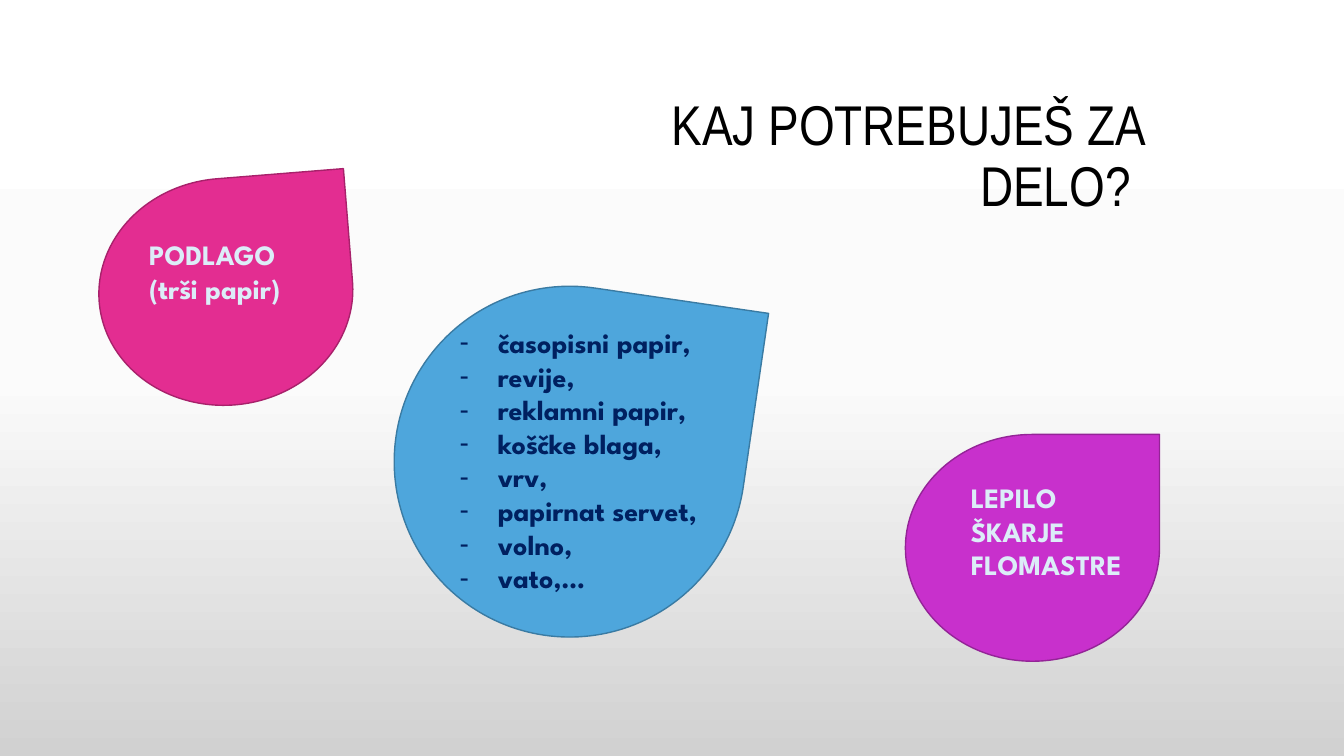
from copy import deepcopy

from lxml.etree import SubElement
from pptx import Presentation
from pptx.dml.color import RGBColor
from pptx.enum.shapes import MSO_SHAPE
from pptx.enum.text import MSO_ANCHOR, MSO_AUTO_SIZE, PP_ALIGN
from pptx.oxml.ns import qn
from pptx.util import Inches, Pt


def rgb(value):
    return RGBColor.from_string(value)


def style(paragraph, font_name, size, color, bold):
    for run in paragraph.runs:
        run.font.name = font_name
        run.font.size = Pt(size)
        run.font.bold = bold
        run.font.color.rgb = rgb(color)


deck = Presentation()
deck.slide_width = Inches(13.33)
deck.slide_height = Inches(7.5)
slide = deck.slides.add_slide(deck.slide_layouts[5])

backdrop = slide.background.fill
backdrop.gradient()
backdrop.gradient_angle = 270
stop_list = backdrop._fill._gradFill.gsLst
stop_list.append(deepcopy(stop_list[-1]))
for stop, position, color in zip(
    backdrop.gradient_stops, (0, 0.5, 1), ("FFFFFF", "FBFBFB", "D1D1D1")
):
    stop.position = position
    stop.color.rgb = rgb(color)

title = slide.shapes.title
title.left, title.top = Inches(5.18), Inches(0.86)
title.width, title.height = Inches(6.26), Inches(1.41)
title.text_frame.text = "KAJ POTREBUJEŠ ZA DELO? "
title.text_frame.word_wrap = True
title.text_frame.auto_size = MSO_AUTO_SIZE.NONE
title.text_frame.vertical_anchor = MSO_ANCHOR.MIDDLE
question = title.text_frame.paragraphs[0]
question.alignment = PP_ALIGN.RIGHT
question.line_spacing = 0.9
style(question, "Arial Narrow", 40, "000000", False)

materials = [
    "časopisni papir,",
    "revije,",
    "reklamni papir,",
    "koščke blaga,",
    "vrv,",
    "papirnat servet,",
    "volno,",
    "vato,…",
]
tools = ["LEPILO", "ŠKARJE", "FLOMASTRE"]

drops = [
    ((0.98, 1.77, 2.52, 2.25), 355.4, "E32D91", "A8216B",
     (1.38, 2.31, 1.91, 0.77), ["PODLAGO (trši papir)"], "DCEDF8", False),
    ((3.91, 2.84, 3.48, 3.48), 8.3, "4EA6DC", "3A7BA3",
     (4.46, 3.18, 3.26, 2.79), materials, "002060", True),
    ((8.98, 4.31, 2.52, 2.25), 0, "C830CC", "942497",
     (9.53, 4.72, 1.91, 1.11), tools, "DCEDF8", False),
]

for drop_box, angle, fill, outline, label_box, lines, ink, bulleted in drops:
    drop = slide.shapes.add_shape(MSO_SHAPE.TEAR, *map(Inches, drop_box))
    drop.rotation = angle
    drop.shadow.inherit = False
    drop.fill.solid()
    drop.fill.fore_color.rgb = rgb(fill)
    drop.line.color.rgb = rgb(outline)
    drop.line.width = Pt(1)

    label = slide.shapes.add_textbox(*map(Inches, label_box)).text_frame
    label.word_wrap = True
    label.auto_size = MSO_AUTO_SIZE.SHAPE_TO_FIT_TEXT
    label.text = "\n".join(lines)
    for paragraph in label.paragraphs:
        if bulleted:
            properties = paragraph._p.get_or_add_pPr()
            properties.set("marL", str(Inches(0.38)))
            properties.set("indent", str(-Inches(0.38)))
            SubElement(properties, qn("a:buFont")).set("typeface", "Arial")
            SubElement(properties, qn("a:buChar")).set("char", "-")
        style(paragraph, "League Spartan", 20, ink, True)

deck.save("out.pptx")
